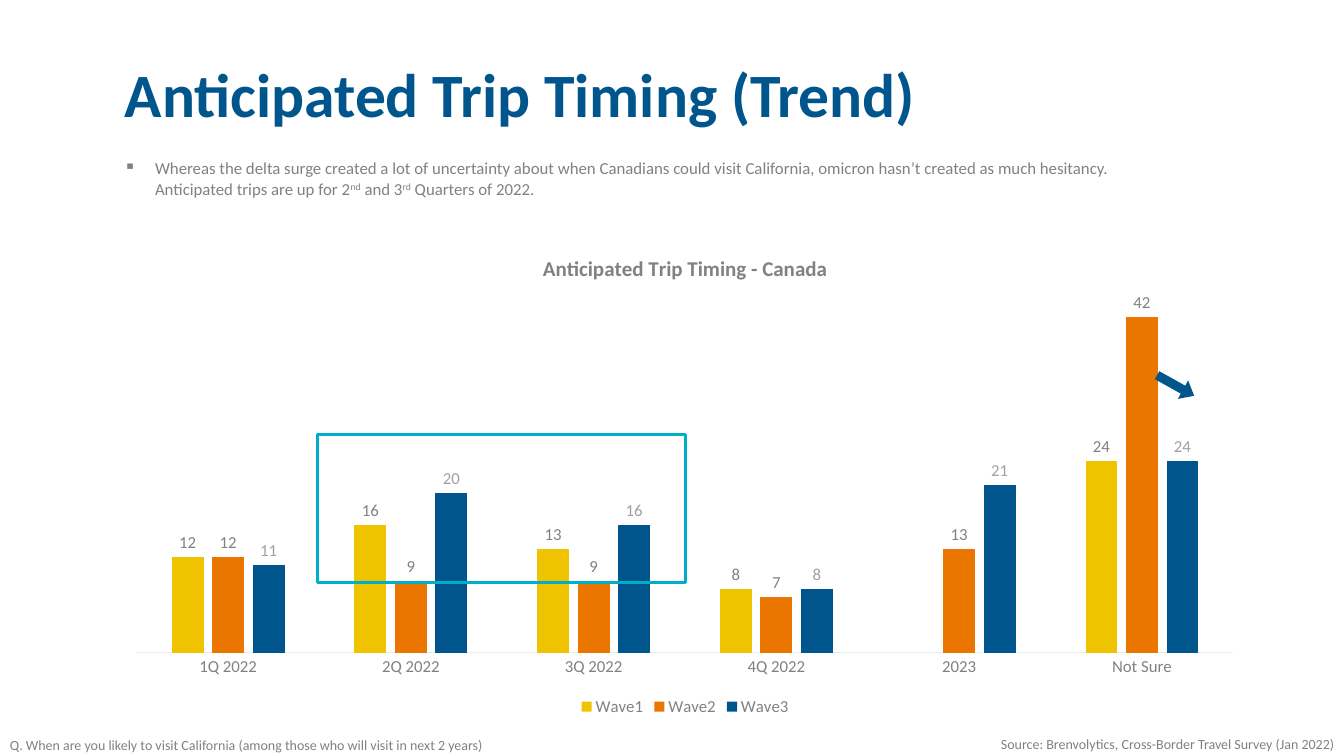
"""Build the slide on anticipated trip timing with its clustered column chart."""
from lxml import etree
from pptx import Presentation
from pptx import util as u
from pptx.chart.data import CategoryChartData
from pptx.dml.color import RGBColor
from pptx.enum import chart as charts, shapes, text
from pptx.oxml.ns import qn

COLORS = {"blue": "00558C", "gray": "808180", "pale": "A0A0A0", "rule": "ECECEC",
          "yellow": "F0C300", "orange": "EA7600", "teal": "00AEC7", "white": "FFFFFF"}
PX = u.Inches(1) // 100
QUARTERS = ["1Q 2022", "2Q 2022", "3Q 2022", "4Q 2022", "2023", "Not Sure"]
WAVES = [("Wave1", [12, 16, 13, 8, None, 24], "yellow", "gray"),
         ("Wave2", [12, 9, 9, 7, 13, 42], "orange", "gray"),
         ("Wave3", [11, 20, 16, 8, 21, 24], "blue", "pale")]
PLOT_AREA = {"x": 0.02, "y": 0.12, "w": 0.96, "h": 0.74}


class Slide:
    """Style and current slide, with one method per kind of element."""

    font = "Calibri"

    def __init__(self, deck):
        self.slide = deck.slides.add_slide(deck.slide_layouts[6])
        background = self.slide.background.fill
        background.solid()
        background.fore_color.rgb = self.color("white")

    def color(self, name):
        return RGBColor.from_string(COLORS[name])

    def place(self, box):
        return [length * PX for length in box]

    def style(self, font, size, color="gray", bold=False):
        font.name, font.size, font.bold = self.font, u.Pt(size), bold
        font.color.rgb = self.color(color)

    def text(self, box, pieces, size, color="gray", bold=False, wrap=True, grow=True):
        frame = self.slide.shapes.add_textbox(*self.place(box)).text_frame
        frame.word_wrap = wrap
        fit = text.MSO_AUTO_SIZE
        frame.auto_size = fit.SHAPE_TO_FIT_TEXT if grow else fit.NONE
        paragraph = frame.paragraphs[0]
        for words, raised in pieces:
            run = paragraph.add_run()
            run.text = words
            self.style(run.font, size, color, bold)
            if raised:
                run._r.get_or_add_rPr().set("baseline", "30000")
        return paragraph

    def bullet(self, paragraph, mark, indent):
        props = paragraph._p.get_or_add_pPr()
        props.set("marL", str(indent * PX))
        props.set("indent", str(-indent * PX))
        etree.SubElement(props, qn("a:buChar")).set("char", mark)

    def shape(self, kind, box, fill=None, line=None, width=0, rotation=0):
        shape = self.slide.shapes.add_shape(kind, *self.place(box))
        shape.shadow.inherit = False
        shape.rotation = rotation
        if fill:
            shape.fill.solid()
            shape.fill.fore_color.rgb = self.color(fill)
        else:
            shape.fill.background()
        if line:
            shape.line.color.rgb = self.color(line)
            shape.line.width = u.Pt(width)
        else:
            shape.line.fill.background()
        return shape

    def columns(self, box, title, categories, series, top):
        data = CategoryChartData(number_format="0")
        data.categories = categories
        for name, values, _, _ in series:
            data.add_series(name, values)
        kind = charts.XL_CHART_TYPE.COLUMN_CLUSTERED
        chart = self.slide.shapes.add_chart(kind, *self.place(box), data).chart
        self.style(chart.font, 10)
        chart.has_title = True
        heading = chart.chart_title.text_frame.paragraphs[0]
        heading.text = title
        self.style(heading.runs[0].font, 15, bold=True)
        chart.chart_title.include_in_layout = False
        chart.has_legend = True
        chart.legend.position = charts.XL_LEGEND_POSITION.BOTTOM
        chart.legend.include_in_layout = False
        self.style(chart.legend.font, 12)

        quarters, shares = chart.category_axis, chart.value_axis
        quarters.major_tick_mark = charts.XL_TICK_MARK.NONE
        quarters.format.line.color.rgb = self.color("rule")
        quarters.format.line.width = u.Pt(0.75)
        self.style(quarters.tick_labels.font, 12)
        shares.visible = shares.has_major_gridlines = False
        shares.minimum_scale, shares.maximum_scale = 0, top

        plot = chart.plots[0]
        plot.gap_width, plot.overlap, plot.vary_by_categories = 219, -27, False
        for wave, (_, _, fill, label) in zip(plot.series, series):
            wave.format.fill.solid()
            wave.format.fill.fore_color.rgb = self.color(fill)
            labels = wave.data_labels
            labels.show_value = True
            labels.number_format, labels.number_format_is_linked = "0", False
            labels.position = charts.XL_LABEL_POSITION.OUTSIDE_END
            self.style(labels.font, 12, label)
        self.fix_plot_area(chart)

    def fix_plot_area(self, chart):
        area = chart._chartSpace.find(".//" + qn("c:plotArea"))
        for stale in area.findall(qn("c:layout")):
            area.remove(stale)
        layout = etree.Element(qn("c:layout"))
        area.insert(0, layout)
        manual = etree.SubElement(layout, qn("c:manualLayout"))
        settings = {"layoutTarget": "inner", "xMode": "edge", "yMode": "edge", **PLOT_AREA}
        for tag, value in settings.items():
            etree.SubElement(manual, qn("c:" + tag)).set("val", str(value))


def main():
    deck = Presentation()
    deck.slide_width, deck.slide_height = 1333 * PX, 750 * PX
    page = Slide(deck)

    headline = page.text((114, 54, 1106, 197), [("Anticipated Trip Timing (Trend)", False)],
                         44, "blue", bold=True, grow=False)
    headline.line_spacing, headline.space_before = u.Pt(50), u.Pt(10)

    finding = page.text((113, 152, 1053, 71), [
        ("Whereas the delta surge created a lot of uncertainty about when Canadians could visit "
         "California, omicron hasn’t created as much hesitancy. Anticipated trips are up for 2", False),
        ("nd", True), (" and 3", False), ("rd", True), (" Quarters of 2022.", False)], 12)
    page.bullet(finding, "▪", 31)

    source = page.text((740, 725, 593, 27), [
        ("Source: Brenvolytics, Cross-Border Travel Survey (Jan 2022)", False)], 10)
    source.alignment = text.PP_ALIGN.RIGHT

    page.columns((113, 233, 1133, 482), "Anticipated Trip Timing - Canada", QUARTERS, WAVES, 45)

    decline = page.shape(shapes.MSO_SHAPE.RIGHT_ARROW, (1145, 372, 42, 21), fill="blue",
                         rotation=29.1)
    decline.adjustments[0], decline.adjustments[1] = 0.43, 0.6

    page.text((0, 726, 563, 27), [
        ("Q. When are you likely to visit California "
         "(among those who will visit in next 2 years)", False)], 10, wrap=False)
    page.shape(shapes.MSO_SHAPE.RECTANGLE, (315, 431, 365, 147), line="teal", width=2.25)
    deck.save("out.pptx")


if __name__ == "__main__":
    main()
